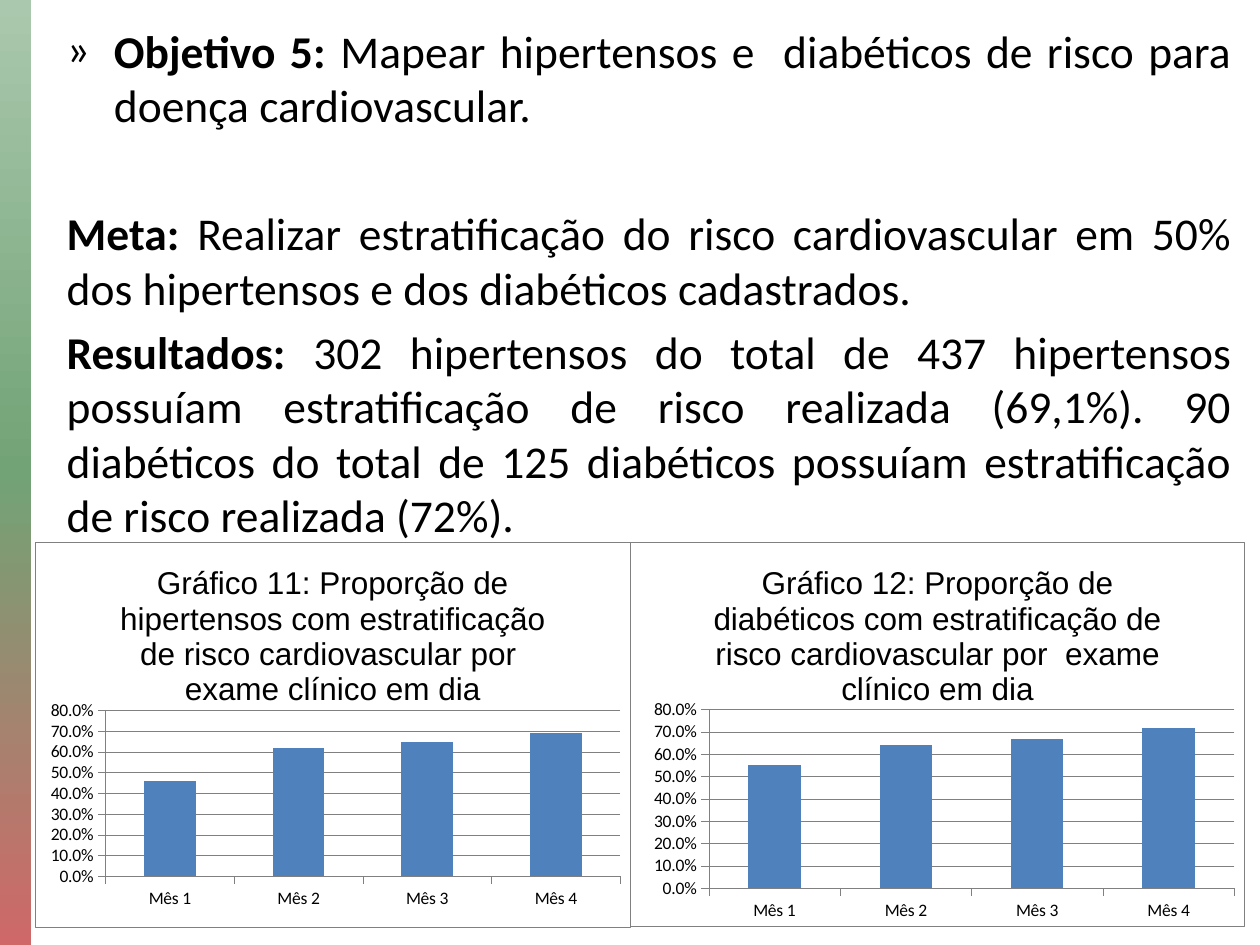
from lxml.etree import SubElement
from pptx import Presentation
from pptx.chart.data import CategoryChartData
from pptx.dml.color import RGBColor
from pptx.enum.chart import XL_CHART_TYPE, XL_TICK_MARK
from pptx.enum.shapes import MSO_SHAPE
from pptx.enum.text import PP_ALIGN
from pptx.oxml import parse_xml
from pptx.oxml.ns import nsdecls, qn
from pptx.util import Pt


def color(value):
    return RGBColor.from_string(value)


def set_font(font, name, size):
    font.name = name
    font.size = Pt(size)
    font.bold = False
    font.color.rgb = color("000000")


deck = Presentation()
deck.slide_width = Pt(720)
deck.slide_height = Pt(540)
page = deck.slides.add_slide(deck.slide_layouts[6])

band = page.shapes.add_shape(MSO_SHAPE.RECTANGLE, 0, 0, Pt(18), Pt(540))
band.shadow.inherit = False
band.line.fill.background()
band.fill.gradient()
band.fill.gradient_angle = 270
stops = band.element.spPr.find(qn("a:gradFill")).find(qn("a:gsLst"))
for stop in list(stops):
    stops.remove(stop)
for percent, shade in [(0, "AAC8AD"), (50, "72A376"), (100, "CF6868")]:
    stop = SubElement(stops, qn("a:gs"), pos=str(percent * 1000))
    SubElement(stop, qn("a:srgbClr"), val=shade)

paragraphs = [
    ("Objetivo 5: ", "Mapear hipertensos e  diabéticos de risco para doença cardiovascular.", 5.2),
    ("Meta: ", "Realizar estratificação do risco cardiovascular em 50% dos hipertensos "
     "e dos diabéticos cadastrados.", 42),
    ("Resultados: ", "302 hipertensos do total de 437 hipertensos possuíam estratificação de risco "
     "realizada (69,1%). 90 diabéticos do total de 125 diabéticos possuíam estratificação de risco "
     "realizada (72%).", 5.2),
]
box = page.shapes.add_textbox(Pt(31), Pt(9.4), Pt(680.4), Pt(306))
frame = box.text_frame
frame.word_wrap = True
for index, (label, content, gap) in enumerate(paragraphs):
    para = frame.add_paragraph() if index else frame.paragraphs[0]
    para.alignment = PP_ALIGN.JUSTIFY
    para.space_before = Pt(gap)
    for text in (label, content):
        span = para.add_run()
        span.text = text
        set_font(span.font, "Calibri", 26)
        span.font.bold = text == label

bullet = frame.paragraphs[0]._p.get_or_add_pPr()
bullet.set("marL", str(Pt(27)))
bullet.set("indent", str(-Pt(27)))
SubElement(bullet, qn("a:buFont"), typeface="Calibri")
SubElement(bullet, qn("a:buChar"), char="»")

charts = [
    ("Gráfico 11: Proporção de hipertensos com estratificação de risco cardiovascular por  exame clínico em dia",
     (20.2, 309.6, 339.8, 220.3), (0.46, 0.62, 0.65, 0.69), (0.118, 0.438, 0.866, 0.43)),
    ("Gráfico 12: Proporção de diabéticos com estratificação de risco cardiovascular por  exame clínico em dia",
     (360, 309.6, 351.4, 219.6), (0.55, 0.64, 0.67, 0.72), (0.128, 0.437, 0.855, 0.465)),
]
for title, place, values, plot_place in charts:
    data = CategoryChartData(number_format="0.0%")
    data.categories = [f"Mês {month}" for month in range(1, 5)]
    data.add_series("Series 1", values)
    chart = page.shapes.add_chart(
        XL_CHART_TYPE.COLUMN_CLUSTERED, *[Pt(length) for length in place], data).chart
    set_font(chart.font, "Calibri", 11)
    chart.has_legend = False
    chart.has_title = True
    chart.chart_title.include_in_layout = False
    heading = chart.chart_title.text_frame
    heading.text = title
    set_font(heading.paragraphs[0].runs[0].font, "Arial", 18)

    plot = chart.plots[0]
    plot.gap_width = 150
    plot.vary_by_categories = False
    series_fill = plot.series[0].format.fill
    series_fill.solid()
    series_fill.fore_color.rgb = color("4F81BD")

    value_axis = chart.value_axis
    value_axis.minimum_scale = 0
    value_axis.maximum_scale = 0.8
    value_axis.major_unit = 0.1
    value_axis.has_major_gridlines = True
    value_axis.tick_labels.number_format = "0.0%"
    value_axis.tick_labels.number_format_is_linked = False
    for axis in (chart.category_axis, value_axis):
        axis.major_tick_mark = XL_TICK_MARK.OUTSIDE
        set_font(axis.tick_labels.font, "Calibri", 10)
    for line in (chart.category_axis.format.line, value_axis.format.line,
                 value_axis.major_gridlines.format.line):
        line.color.rgb = color("808080")
        line.width = Pt(0.25)

    white = '<a:solidFill><a:srgbClr val="FFFFFF"/></a:solidFill>'
    border = '<a:ln w="3175"><a:solidFill><a:srgbClr val="808080"/></a:solidFill></a:ln>'
    root = chart._chartSpace
    area = root.chart.plotArea
    root.chart.addnext(parse_xml(f'<c:spPr {nsdecls("c", "a")}>{white}{border}</c:spPr>'))
    area.append(parse_xml(f'<c:spPr {nsdecls("c", "a")}>{white}</c:spPr>'))
    for layout in area.findall(qn("c:layout")):
        area.remove(layout)
    layout = parse_xml(f'<c:layout {nsdecls("c")}/>')
    area.insert(0, layout)
    manual = SubElement(layout, qn("c:manualLayout"))
    settings = [("layoutTarget", "inner"), ("xMode", "edge"), ("yMode", "edge")]
    settings += zip("xywh", plot_place)
    for tag, value in settings:
        SubElement(manual, qn(f"c:{tag}"), val=str(value))

deck.save("out.pptx")
